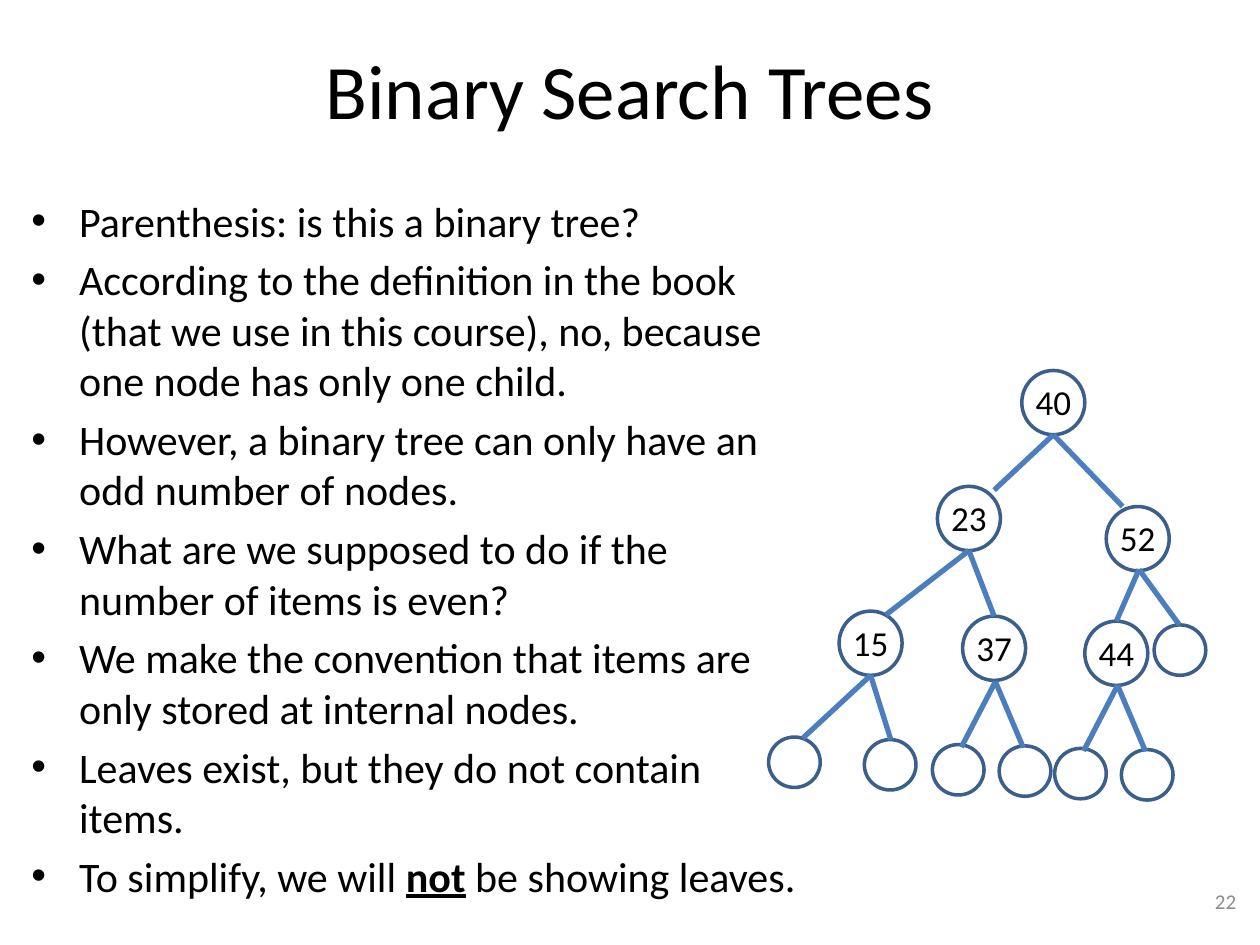
import pptx
import pptx.dml.color
import pptx.enum.shapes
import pptx.enum.text
import pptx.oxml
import pptx.oxml.ns
import pptx.util
from lxml import etree

Inches = pptx.util.Inches
Pt = pptx.util.Pt
ALIGN = pptx.enum.text.PP_ALIGN
ANCHOR = pptx.enum.text.MSO_ANCHOR
qn = pptx.oxml.ns.qn

COLORS = {"text": "000000", "number": "8C8C8C", "node": "3A5F8C", "edge": "4B7EBC"}


def rgb(name):
    return pptx.dml.color.RGBColor.from_string(COLORS[name])


def add_text(place, paragraphs, size, align, anchor=ANCHOR.TOP, color="text"):
    """Each paragraph is a list of (text, emphasised) pairs."""
    box = page.shapes.add_textbox(*map(Inches, place))
    frame = box.text_frame
    frame.word_wrap = True
    frame.vertical_anchor = anchor
    for index, spans in enumerate(paragraphs):
        para = frame.paragraphs[0] if index == 0 else frame.add_paragraph()
        para.alignment = align
        for text, emphasised in spans:
            span = para.add_run()
            span.text = text
            span.font.color.rgb = rgb(color)
            style = {"name": "Calibri", "size": Pt(size),
                     "bold": emphasised, "underline": emphasised}
            for key, value in style.items():
                setattr(span.font, key, value)
    return box


deck = pptx.Presentation()
deck.slide_width, deck.slide_height = Inches(10), Inches(7.5)
page = deck.slides.add_slide(deck.slide_layouts[6])

add_text((0.5, 0.08, 9, 1.25), [[("Binary Search Trees", False)]], 44,
         ALIGN.CENTER, ANCHOR.MIDDLE)

points = [
    "Parenthesis: is this a binary tree?",
    "According to the definition in the book (that we use in this course), no, "
    "because one node has only one child.",
    "However, a binary tree can only have an odd number of nodes.",
    "What are we supposed to do if the number of items is even?",
    "We make the convention that items are only stored at internal nodes.",
    "Leaves exist, but they do not contain items.",
]
paragraphs = [[(point, False)] for point in points]
paragraphs.append([("To simplify, we will ", False), ("not", True),
                   (" be showing leaves.", False)])
body = add_text((0.15, 1.5, 6.36, 5.5), paragraphs, 24, ALIGN.LEFT)
for para in body.text_frame.paragraphs:
    para.space_before = Pt(4.8)
    properties = para._p.get_or_add_pPr()
    properties.set("marL", str(Inches(0.38)))
    properties.set("indent", str(-Inches(0.38)))
    etree.SubElement(properties, qn("a:buFont")).set("typeface", "Arial")
    etree.SubElement(properties, qn("a:buChar")).set("char", "•")

add_text((7.58, 6.95, 2.33, 0.4), [[("22", False)]], 12, ALIGN.RIGHT,
         ANCHOR.MIDDLE, "number")

# Top left corners: internal nodes carry a key, leaves are empty
internal_nodes = [("40", 8.11, 2.94), ("23", 7.44, 3.86), ("52", 8.78, 4.02),
                  ("15", 6.66, 4.85), ("37", 7.64, 4.89), ("44", 8.61, 4.93)]
leaves = [("", 6.1, 5.85), ("", 6.86, 5.87), ("", 7.4, 5.91), ("", 7.93, 5.92),
          ("", 8.37, 5.94), ("", 8.9, 5.95), ("", 9.16, 4.96)]
for key, left, top in internal_nodes + leaves:
    width, height = (0.5, 0.51) if key else (0.41, 0.4)
    node = page.shapes.add_shape(pptx.enum.shapes.MSO_SHAPE.OVAL,
                                 *map(Inches, (left, top, width, height)))
    node.shadow.inherit = False
    node.fill.background()
    node.line.color.rgb = rgb("node")
    node.line.width = Pt(2)
    if key:
        add_text((left, top + 0.03, 0.5, 0.44), [[(key, False)]], 20, ALIGN.CENTER)

# Bottom of each parent, then where its edges meet the children
edges = [
    ((8.36, 3.45), [(7.89, 3.89), (8.91, 4.02)]),
    ((7.69, 4.37), [(7.03, 4.88), (7.89, 4.89)]),
    ((9.04, 4.52), [(8.86, 4.93), (9.36, 4.96)]),
    ((6.91, 5.36), [(6.37, 5.86), (7.07, 5.87)]),
    ((7.9, 5.41), [(7.63, 5.93), (8.12, 5.93)]),
    ((8.87, 5.44), [(8.6, 5.96), (9.09, 5.96)]),
]
for parent, children in edges:
    for child in children:
        edge = page.shapes.add_connector(pptx.enum.shapes.MSO_CONNECTOR.STRAIGHT,
                                         *map(Inches, parent + child))
        edge.line.color.rgb = rgb("edge")
        edge.line.width = Pt(3)
        etree.SubElement(edge._element.spPr, qn("a:effectLst"))

deck.save("out.pptx")
